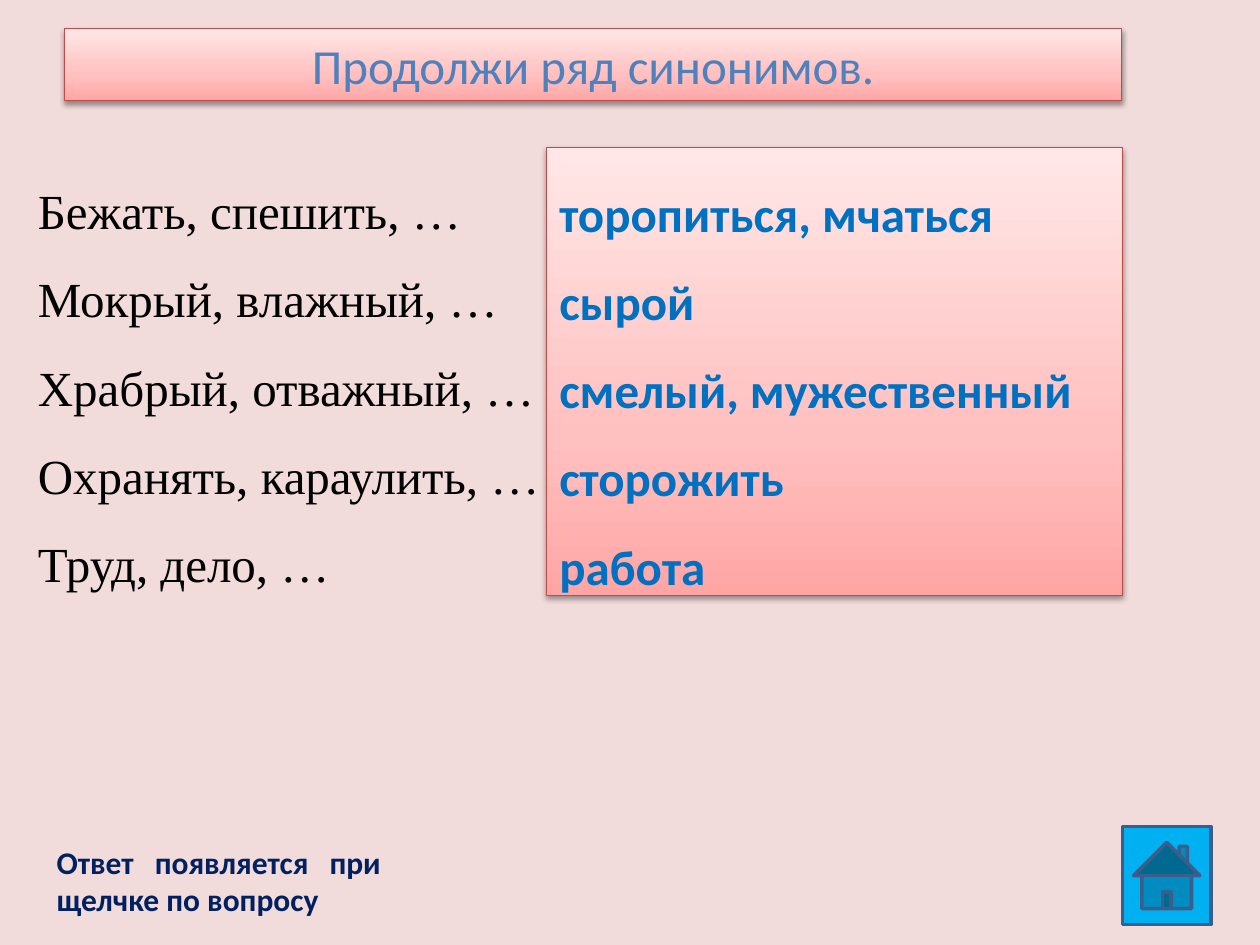
from copy import deepcopy

from pptx import Presentation
from pptx.dml.color import RGBColor
from pptx.enum.shapes import MSO_SHAPE
from pptx.enum.text import MSO_ANCHOR, MSO_AUTO_SIZE, PP_ALIGN
from pptx.oxml import parse_xml
from pptx.oxml.ns import nsdecls, qn
from pptx.util import Cm, Pt

COLORS = {
    "background": "F2DCDB",
    "panel_bottom": "FFA6A5",
    "panel_middle": "FFC0BF",
    "panel_top": "FFE7E7",
    "panel_line": "BF4C48",
    "title": "4F81BD",
    "answer": "0070C0",
    "question": "000000",
    "hint": "002060",
    "home": "00B0F0",
    "home_line": "3A5F8C",
}

SYNONYMS = [
    ("Бежать, спешить, …", "торопиться, мчаться"),
    ("Мокрый, влажный, …", "сырой"),
    ("Храбрый, отважный, …", "смелый, мужественный"),
    ("Охранять, караулить, …", "сторожить"),
    ("Труд, дело, …", "работа"),
]


def rgb(name):
    return RGBColor.from_string(COLORS[name])


def place(shape, box):
    shape.left, shape.top, shape.width, shape.height = (Cm(length) for length in box)


def write(shape, lines, color, size=28, font="Calibri", bold=False,
          align=PP_ALIGN.LEFT, spacing=1.0, anchor=MSO_ANCHOR.TOP):
    """Fill a shape with one unbulleted paragraph per line."""
    frame = shape.text_frame
    frame.text = "\n".join(lines)
    frame.word_wrap = True
    frame.auto_size = MSO_AUTO_SIZE.NONE
    frame.vertical_anchor = anchor
    for paragraph in frame.paragraphs:
        paragraph.alignment = align
        paragraph.line_spacing = spacing
        paragraph.space_before = Pt(0)
        properties = paragraph._p.get_or_add_pPr()
        properties.set("marL", "0")
        properties.set("indent", "0")
        properties.append(parse_xml(f"<a:buNone {nsdecls('a')}/>"))
        for run in paragraph.runs:
            run.font.name = font
            run.font.size = Pt(size)
            run.font.bold = bold
            run.font.color.rgb = rgb(color)


def style_panel(shape):
    """Give a shape the pink gradient, red outline and soft shadow."""
    shape.fill.gradient()
    shape.fill.gradient_angle = 90
    stop_list = shape._element.spPr.find(qn("a:gradFill")).find(qn("a:gsLst"))
    stop_list.insert(1, deepcopy(stop_list[0]))
    stops = [(0, "panel_bottom"), (0.35, "panel_middle"), (1, "panel_top")]
    for stop, (position, color) in zip(shape.fill.gradient_stops, stops):
        stop.position = position
        stop.color.rgb = rgb(color)
    shape.line.color.rgb = rgb("panel_line")
    shape.line.width = Pt(0.75)
    shape.shadow.inherit = False
    shape._element.spPr.find(qn("a:effectLst")).append(parse_xml(
        f'<a:outerShdw {nsdecls("a")} blurRad="{Pt(3.1)}" dist="{Pt(1.6)}" '
        'dir="5400000" rotWithShape="0"><a:srgbClr val="000000">'
        '<a:alpha val="38000"/></a:srgbClr></a:outerShdw>'))


def add_heading(slide, box):
    heading = slide.shapes.title
    place(heading, box)
    style_panel(heading)
    write(heading, ["Продолжи ряд синонимов."], "title",
          align=PP_ALIGN.CENTER, anchor=MSO_ANCHOR.MIDDLE)


def add_synonyms(slide, box):
    """Put the questions at the left of the box and the answers at its right."""
    left, top, width, height = box
    question_width, answer_width = 12.7, 11.61
    questions, answers = slide.placeholders[1], slide.placeholders[2]
    question_lines, answer_lines = zip(*SYNONYMS)
    place(answers, (left + width - answer_width, top + 0.05, answer_width, height))
    style_panel(answers)
    write(answers, answer_lines, "answer", bold=True, spacing=1.5)
    place(questions, (left, top, question_width, height))
    write(questions, question_lines, "question", font="Times New Roman", spacing=1.5)


def add_footer(slide, box):
    """Put the hint at the left of the box and the home button at its right."""
    left, top, width, height = box
    button_width = 1.78
    hint = slide.shapes.add_textbox(Cm(left), Cm(top + 0.2), Cm(7.04), Cm(1.8))
    write(hint, ["Ответ появляется при щелчке по вопросу"], "hint",
          size=18, bold=True, align=PP_ALIGN.JUSTIFY)
    home = slide.shapes.add_shape(
        MSO_SHAPE.ACTION_BUTTON_HOME, Cm(left + width - button_width), Cm(top),
        Cm(button_width), Cm(height))
    home.fill.solid()
    home.fill.fore_color.rgb = rgb("home")
    home.line.color.rgb = rgb("home_line")
    home.line.width = Pt(2)
    home.shadow.inherit = False


def main():
    presentation = Presentation()
    presentation.slide_width, presentation.slide_height = Cm(25.4), Cm(19.05)
    two_content = presentation.slide_layouts[3]
    slide = presentation.slides.add_slide(two_content)
    slide.background.fill.solid()
    slide.background.fill.fore_color.rgb = rgb("background")
    add_heading(slide, (1.3, 0.58, 21.31, 1.45))
    add_synonyms(slide, (0.51, 2.92, 22.12, 9.04))
    add_footer(slide, (0.89, 16.66, 23.52, 1.98))
    presentation.save("out.pptx")


if __name__ == "__main__":
    main()
